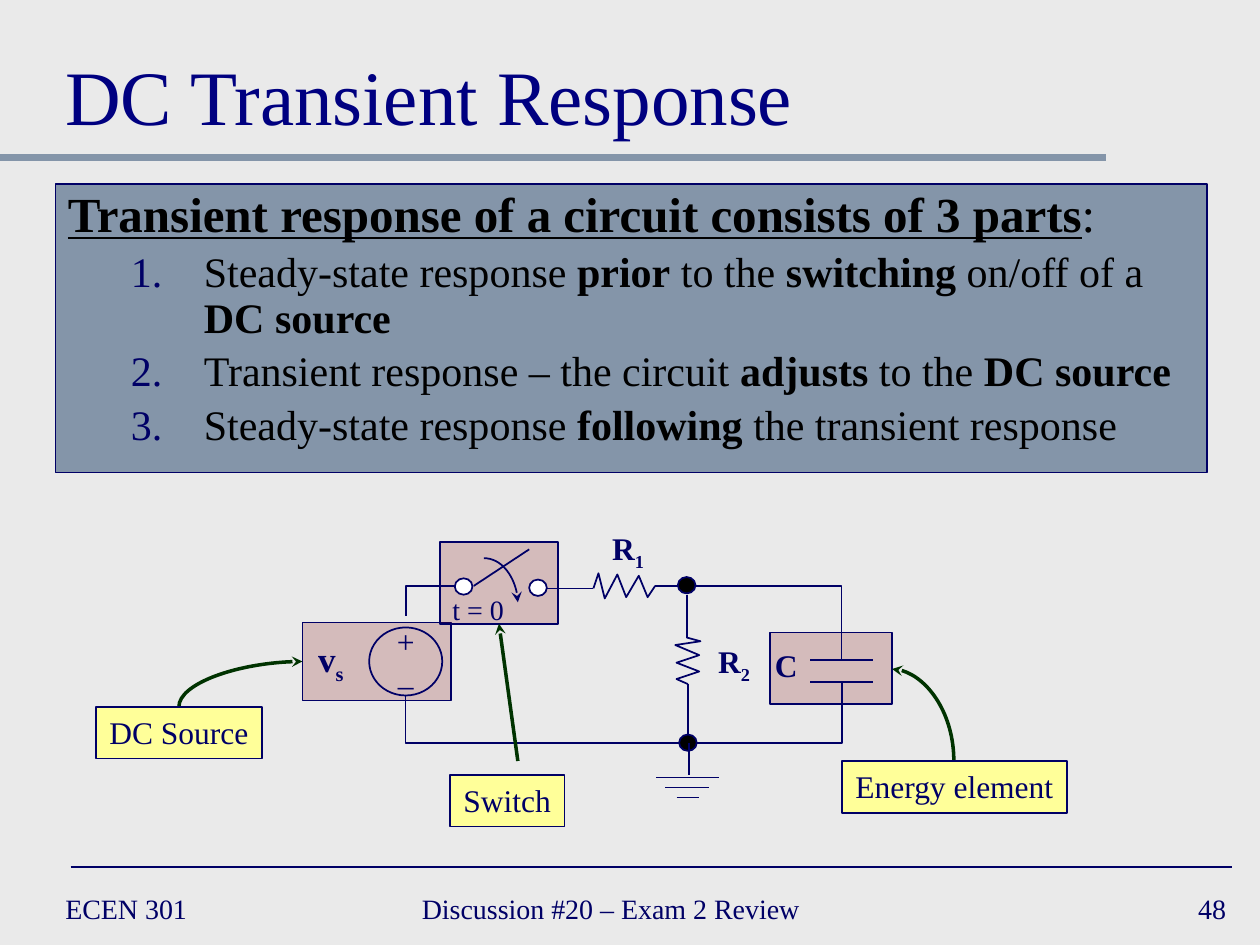
from lxml import etree
from pptx import Presentation, util as u
from pptx.dml.color import RGBColor
from pptx.enum import shapes, text
from pptx.oxml import ns

CELL = u.Inches(0.1)
NAVY, GREEN, SLATE = "000066", "003300", "8495A9"
FACE = "Times New Roman"


def at(*cells):
    return [u.Emu(round(c * CELL)) for c in cells]


def tint(fill, shade):
    fill.solid()
    fill.fore_color.rgb = RGBColor.from_string(shade)


deck = Presentation()
deck.slide_width, deck.slide_height = at(100, 75)
slide = deck.slides.add_slide(deck.slide_layouts[6])
tint(slide.background.fill, "EAEAEA")
draw = slide.shapes
rect, oval = shapes.MSO_SHAPE.RECTANGLE, shapes.MSO_SHAPE.OVAL
left, mid, right = text.PP_ALIGN.LEFT, text.PP_ALIGN.CENTER, text.PP_ALIGN.RIGHT
top, low = text.MSO_ANCHOR.TOP, text.MSO_ANCHOR.BOTTOM
core = text.MSO_ANCHOR.MIDDLE

forms = [
    (rect, (61.1, 50.2, 9.7, 5.7), "800000", 1),
    (rect, (24, 49.4, 11.8, 6.2), "800000", 1),
    (rect, (34.9, 43, 9.4, 6.5), "800000", 1),
    (rect, (4.4, 14.6, 91.4, 22.9), SLATE, 0.75),
    (oval, (53.8, 45.8, 1.4, 1.3), "000000", 1),
    (oval, (53.9, 58.3, 1.4, 1.3), "000000", 1),
    (oval, (29.3, 49.8, 5.8, 5.4), None, 1),
    (oval, (36.1, 45.9, 1.4, 1.3), "FFFFFF", 1),
    (oval, (42, 46, 1.4, 1.3), "FFFFFF", 1),
]
made = []
for kind, box, shade, width in forms:
    form = draw.add_shape(kind, *at(*box))
    form.shadow.inherit = False
    if shade:
        tint(form.fill, shade)
    else:
        form.fill.background()
    if shade == "800000":
        tone = form.fill._xPr.find(".//" + ns.qn("a:srgbClr"))
        etree.SubElement(tone, ns.qn("a:alpha")).set("val", "20000")
    tint(form.line.fill, NAVY)
    form.line.width = u.Pt(width)
    made.append(form)
switch, panel = made[2:4]

zigzags = [
    [(47.1, 46.7), (47.5, 45.5), (48, 47.5), (49, 45.6), (49.7, 47.4),
     (50.7, 45.7), (51.4, 47.4), (52, 46.5)],
    [(54.5, 50.6), (55.6, 50.9), (53.6, 51.2), (55.5, 52), (53.7, 52.6),
     (55.5, 53.3), (53.7, 53.9), (54.6, 54.3)],
]
for first, *rest in zigzags:
    pen = draw.build_freeform(*at(*first))
    pen.add_line_segments([at(*spot) for spot in rest], close=False)
    coil = pen.convert_to_shape()
    coil.shadow.inherit = False
    coil.fill.background()
    tint(coil.line.fill, NAVY)
    coil.line.width = u.Pt(1)

line = shapes.MSO_CONNECTOR.STRAIGHT
bent, curve = shapes.MSO_CONNECTOR.ELBOW, shapes.MSO_CONNECTOR.CURVE
wires = [
    (line, (0, 12.5, 87.8, 12.5), SLATE, 4, None),
    (line, (5.6, 68.8, 97.8, 68.8), NAVY, 1, None),
    (bent, (53.9, 59, 32.2, 55.2), NAVY, 1, None),
    (bent, (36.1, 46.5, 32.2, 48.9), NAVY, 1, None),
    (bent, (55.2, 46.5, 66.8, 52.4), NAVY, 1, None),
    (bent, (55.3, 59, 66.8, 54.1), NAVY, 1, None),
    (line, (53.8, 46.5, 52, 46.5), NAVY, 1, None),
    (line, (47.1, 46.7, 43.4, 46.7), NAVY, 1, None),
    (line, (37.6, 46.5, 42, 43.6), NAVY, 1, None),
    (line, (54.5, 47.2, 54.5, 50.6), NAVY, 1, None),
    (line, (54.6, 58.3, 54.6, 54.3), NAVY, 1, None),
    (line, (54.7, 61.5, 54.7, 59), NAVY, 1, None),
    (line, (52.1, 61.7, 57.1, 61.7), NAVY, 1, None),
    (line, (52.8, 62.5, 56.3, 62.5), NAVY, 1, None),
    (line, (53.7, 63.3, 55.5, 63.3), NAVY, 1, None),
    (line, (64.3, 52.4, 69.3, 52.4), NAVY, 1, None),
    (line, (64.3, 54.1, 69.3, 54.1), NAVY, 1, None),
    (curve, (38.4, 44.3, 41.1, 47.8), NAVY, 1, "tailEnd"),
    (curve, (24, 52.5, 14.2, 56.1), GREEN, 2, "headEnd"),
    (curve, (70.8, 53.1, 75.7, 60.4), GREEN, 2, "headEnd"),
    (line, (41.1, 60.4, 39.6, 49.5), GREEN, 2, "tailEnd"),
]
for kind, ends, shade, width, tip in wires:
    wire = draw.add_connector(kind, *at(*ends))
    tint(wire.line.fill, shade)
    wire.line.width = u.Pt(width)
    prop = wire._element.spPr
    if kind != line:
        name = "bentConnector2" if kind == bent else "curvedConnector2"
        prop.find(ns.qn("a:prstGeom")).set("prst", name)
    if tip:
        etree.SubElement(wire.line._get_or_add_ln(), ns.qn("a:" + tip)).set("type", "stealth")
    etree.SubElement(prop, ns.qn("a:effectLst"))
wire.end_connect(switch, 2)

notes = [
    ((4.2, 1.7, 91.7, 10), low, left, 44, "000080", ["DC Transient Response"]),
    ((4.2, 70, 21.7, 4.2), core, left, 16, NAVY, ["ECEN 301"]),
    ((32.5, 70, 38.3, 4.2), core, left, 16, NAVY, ["Discussion #20 – Exam 2 Review"]),
    ((77.5, 70, 20.8, 4.2), core, right, 16, NAVY, ["48"]),
    ((47.5, 41.5, 4.7, 4), top, mid, 18, NAVY, ["R_1"]),
    ((55.9, 50.5, 4.7, 4), top, mid, 18, NAVY, ["R_2"]),
    ((60.5, 50.8, 3.8, 4), top, mid, 18, NAVY, ["C_"]),
    ((24.2, 50.1, 4.1, 4.3), top, mid, 20, NAVY, ["v_s"]),
    ((30.5, 48.9, 3.4, 7), top, mid, 18, NAVY, ["+", "–"]),
    ((34.9, 46.5, 6.1, 3.7), top, mid, 16, NAVY, ["t = 0"]),
    ((7.6, 56.1, 13.2, 4.1), top, mid, 18, NAVY, ["DC Source"]),
    ((35.7, 61.5, 9.1, 4.1), top, mid, 18, NAVY, ["Switch"]),
    ((66.8, 60.4, 17.9, 4.1), top, mid, 18, NAVY, ["Energy element"]),
]
tags = {"DC Source", "Switch", "Energy element"}
for box, hold, side, size, shade, rows in notes:
    if rows[0] in tags:
        note = draw.add_shape(rect, *at(*box))
        note.shadow.inherit = False
        tint(note.fill, "FFFF99")
        tint(note.line.fill, NAVY)
        note.line.width = u.Pt(1)
    else:
        note = draw.add_textbox(*at(*box))
    frame = note.text_frame
    frame.word_wrap = size == 44
    frame.vertical_anchor = hold
    for n, row in enumerate(rows):
        para = frame.add_paragraph() if n else frame.paragraphs[0]
        para.alignment = side
        if n:
            para.space_before = u.Pt(3)
        base, mark, sub = row.partition("_")
        para.add_run().text = base
        if sub:
            run = para.add_run()
            run.text = sub
            run._r.get_or_add_rPr().set("baseline", "-25000")
        font = para.font
        font.name, font.size, font.bold = FACE, u.Pt(size), bool(mark)
        tint(font.fill, shade)

points = [
    "*Transient response of a circuit consists of 3 parts*:",
    "Steady-state response *prior* to the *switching* on/off of a *DC source*",
    "Transient response – the circuit *adjusts* to the *DC source*",
    "Steady-state response *following* the transient response",
]
frame = panel.text_frame
frame.word_wrap = True
frame.vertical_anchor = top
for n, point in enumerate(points):
    para = frame.add_paragraph() if n else frame.paragraphs[0]
    para.alignment = left
    para.line_spacing = 0.9
    prop = para._p.get_or_add_pPr()
    inset, back = at(10.8, -5.8) if n else at(6.7, -6.7)
    prop.set("marL", str(inset))
    prop.set("indent", str(back))
    if n:
        para.space_before = u.Pt(4.8)
        tone = etree.SubElement(prop, ns.qn("a:buClr"))
        etree.SubElement(tone, ns.qn("a:srgbClr")).set("val", NAVY)
        etree.SubElement(prop, ns.qn("a:buAutoNum")).set("type", "arabicPeriod")
    font = para.font
    font.name, font.size = FACE, u.Pt(24 if n else 28)
    tint(font.fill, "000000")
    for k, part in enumerate(point.split("*")):
        if part:
            run = para.add_run()
            run.text = part
            run.font.bold = k % 2 == 1
            run.font.underline = n == 0 and k == 1

deck.save("out.pptx")
